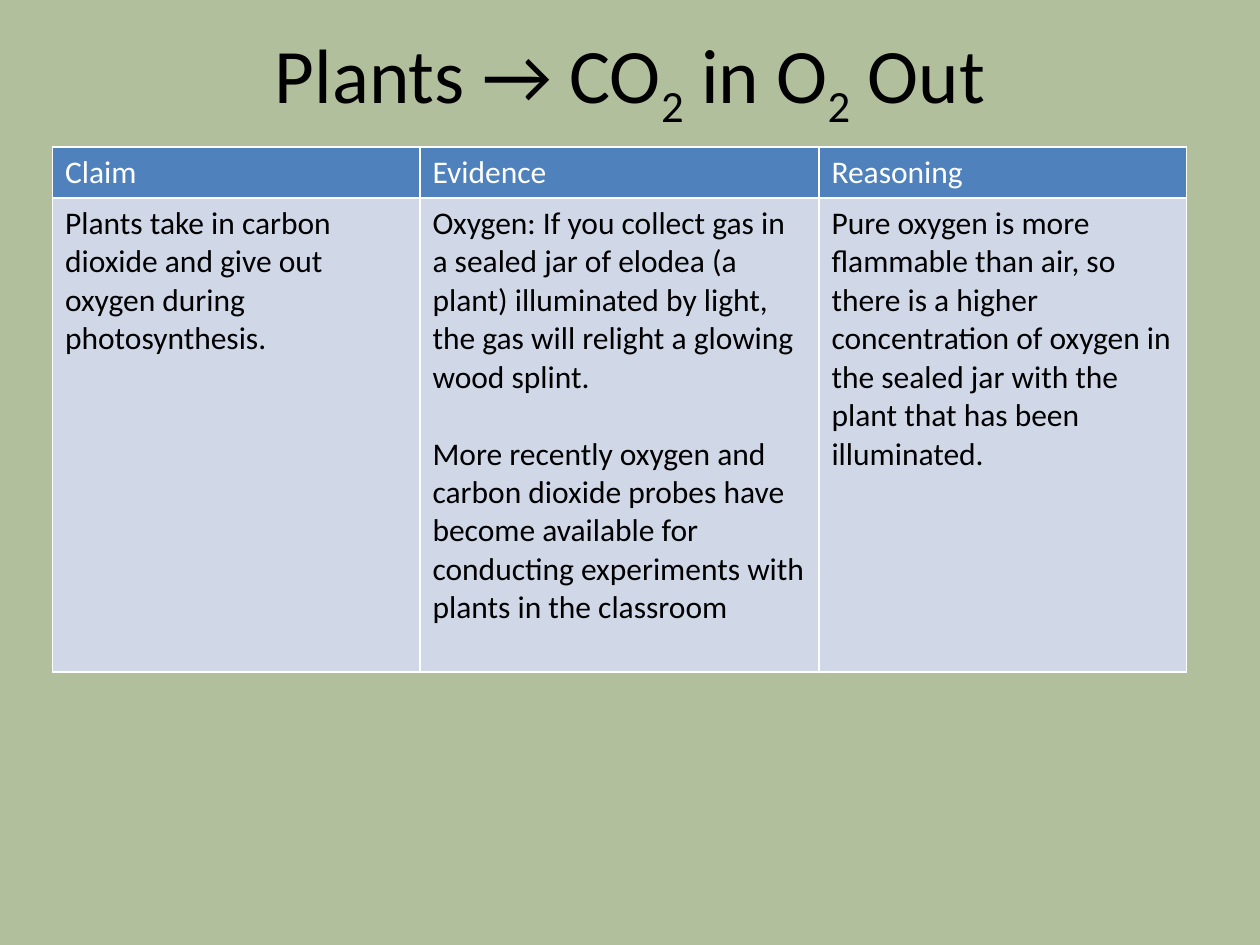
from lxml.etree import SubElement as Sub
from pptx import Presentation
from pptx.dml.color import RGBColor as RGB
from pptx.enum.text import MSO_ANCHOR as Anchor, PP_ALIGN as Align
from pptx.oxml.ns import qn
from pptx.util import Pt

HUES = {"back": "B2BF9D", "head": "4F81BD", "body": "D0D8E8",
        "ink": "000000", "white": "FFFFFF"}
FONT = "Calibri"


def style(para, size, hue):
    font = para.font
    font.name, font.size, font.bold = FONT, Pt(size), False
    font.color.rgb = RGB.from_string(HUES[hue])


def edge(cell):
    """Draw a thin white line on all four sides; call before filling."""
    props = cell._tc.get_or_add_tcPr()
    for tag in ("a:lnL", "a:lnR", "a:lnT", "a:lnB"):
        line = Sub(props, qn(tag), w=str(Pt(1)))
        Sub(Sub(line, qn("a:solidFill")), qn("a:srgbClr"), val=HUES["white"])


deck = Presentation()
deck.slide_width, deck.slide_height = Pt(720), Pt(540)
slide = deck.slides.add_slide(deck.slide_layouts[6])
back = slide.background.fill
back.solid()
back.fore_color.rgb = RGB.from_string(HUES["back"])

# Title with lowered digits
frame = slide.shapes.add_textbox(Pt(36), Pt(0), Pt(648), Pt(90)).text_frame
frame.word_wrap = True
frame.vertical_anchor = Anchor.MIDDLE
title = frame.paragraphs[0]
title.alignment = Align.CENTER
style(title, 44, "ink")
for text in ("Plants → CO", "2", " in O", "2", " Out"):
    run = title.add_run()
    run.text = text
    if text == "2":
        run._r.get_or_add_rPr().set("baseline", "-25000")

# Claim, evidence and reasoning
COLS = [
    (210, "Claim", [
        "Plants take in carbon dioxide and give out oxygen during "
        "photosynthesis."]),
    (228, "Evidence", [
        "Oxygen: If you collect gas in a sealed jar of elodea (a plant) "
        "illuminated by light, the gas will relight a glowing wood splint.",
        "More recently oxygen and carbon dioxide probes have become available "
        "for conducting experiments with plants in the classroom"]),
    (210, "Reasoning", [
        "Pure oxygen is more flammable than air, so there is a higher "
        "concentration of oxygen in the sealed jar with the plant that has "
        "been illuminated."]),
]
table = slide.shapes.add_table(
    2, len(COLS), Pt(30), Pt(84), Pt(648), Pt(300)).table
table.rows[0].height, table.rows[1].height = Pt(29.2), Pt(270.8)

for col, (width, head, body) in enumerate(COLS):
    table.columns[col].width = Pt(width)
    rows = [([head], "head", "white"), (body, "body", "ink")]
    for row, (texts, fill, ink) in enumerate(rows):
        cell = table.cell(row, col)
        edge(cell)
        cell.fill.solid()
        cell.fill.fore_color.rgb = RGB.from_string(HUES[fill])
        cell.text = "\n".join(texts)
        for num, para in enumerate(cell.text_frame.paragraphs):
            style(para, 18, ink)
            if num:
                para.space_before = Pt(22)

deck.save("out.pptx")
